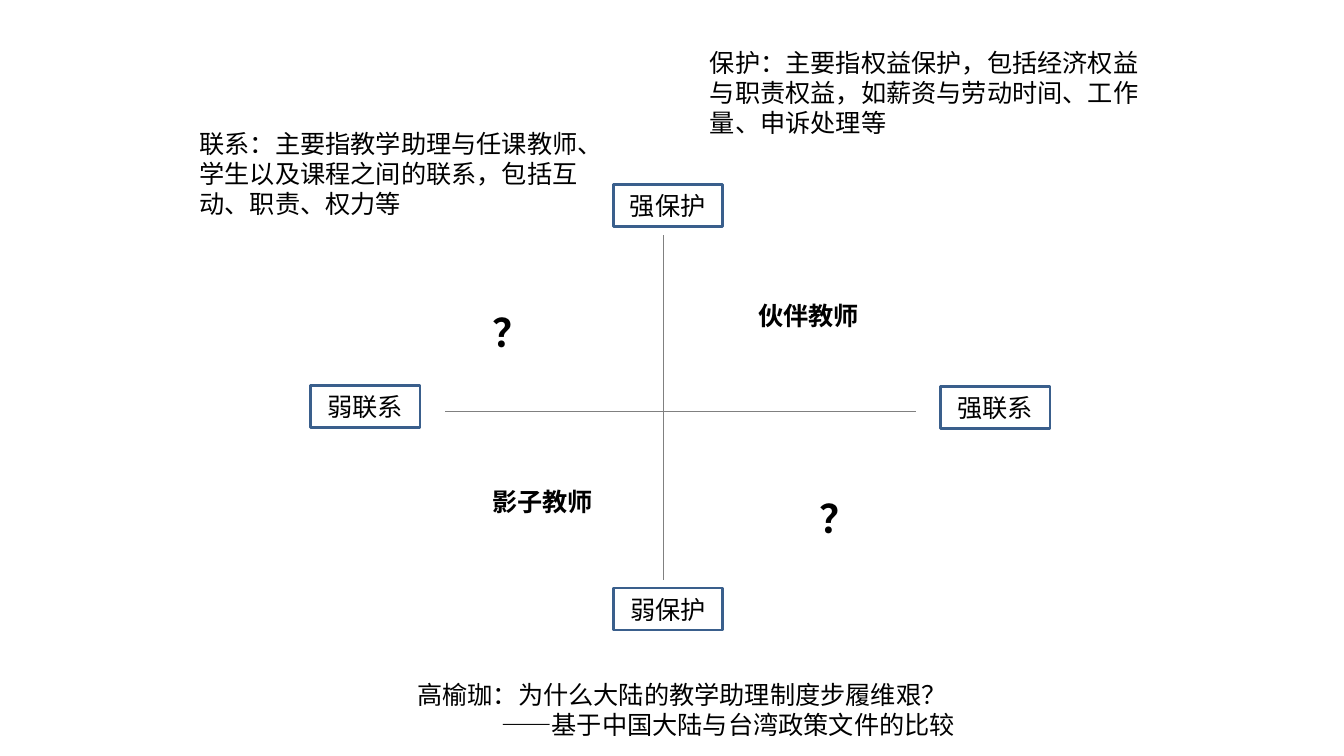
from lxml import etree
from pptx import Presentation
from pptx.dml.color import RGBColor
from pptx.enum.shapes import MSO_CONNECTOR, MSO_SHAPE
from pptx.enum.text import MSO_ANCHOR, PP_ALIGN
from pptx.oxml.ns import qn
from pptx.util import Pt

BLACK = RGBColor(0x00, 0x00, 0x00)
WHITE = RGBColor(0xFF, 0xFF, 0xFF)
BLUE = RGBColor(0x3A, 0x5F, 0x8C)
GREY = RGBColor(0x80, 0x80, 0x80)
RECTANGLE = MSO_SHAPE.RECTANGLE
STRAIGHT = MSO_CONNECTOR.STRAIGHT
CENTER = PP_ALIGN.CENTER
MIDDLE = MSO_ANCHOR.MIDDLE
LABEL_HEIGHT = 30


def add_text(para, text, font_name, size=18, bold=False):
    span = para.add_run()
    span.text = text
    span.font.name = font_name
    span.font.size = Pt(size)
    span.font.bold = bold
    span.font.color.rgb = BLACK


def add_note(left, top, width, height, lines, size=18, bold=False):
    box = page.shapes.add_textbox(Pt(left), Pt(top), Pt(width), Pt(height))
    frame = box.text_frame
    frame.word_wrap = True
    for number, line in enumerate(lines):
        para = frame.add_paragraph() if number else frame.paragraphs[0]
        add_text(para, line, "Arial", size, bold)
    return frame


deck = Presentation()
deck.slide_width = Pt(960)
deck.slide_height = Pt(540)
page = deck.slides.add_slide(deck.slide_layouts[6])

# Axes
for x1, y1, x2, y2 in [(318, 294, 654, 294), (474, 168, 474, 414)]:
    axis = page.shapes.add_connector(STRAIGHT, Pt(x1), Pt(y1), Pt(x2), Pt(y2))
    axis.line.color.rgb = GREY
    axis.line.width = Pt(0.75)
    etree.SubElement(axis._element.spPr, qn("a:effectLst"))

# Axis ends and named quadrants
labels = [
    ("强保护", 438, 132, 78, BLUE, False),
    ("弱保护", 438.3, 420, 78, BLUE, False),
    ("强联系", 672, 276, 78, BLUE, False),
    ("弱联系", 222, 275.5, 78, BLUE, False),
    ("伙伴教师", 525, 210, 105, WHITE, True),
    ("影子教师", 335, 343, 105, WHITE, True),
]
for text, left, top, width, border, bold in labels:
    label = page.shapes.add_shape(
        RECTANGLE, Pt(left), Pt(top), Pt(width), Pt(LABEL_HEIGHT))
    label.shadow.inherit = False
    label.fill.solid()
    label.fill.fore_color.rgb = WHITE
    label.line.color.rgb = border
    label.line.width = Pt(2)
    label.text_frame.vertical_anchor = MIDDLE
    para = label.text_frame.paragraphs[0]
    para.alignment = CENTER
    add_text(para, text, "Calibri", bold=bold)

# Definitions of the two axes
add_note(500, 30.2, 328, 72.7,
         ["保护：主要指权益保护，包括经济权益与职责权益，如薪资与劳动时间、工作量、申诉处理等"])
add_note(135.4, 88, 284.4, 72.7,
         ["联系：主要指教学助理与任课教师、学生以及课程之间的联系，包括互动、职责、权力等"])

# Source, with its subtitle indented
source = add_note(291, 481.7, 417.6, 50.9,
                  ["高榆珈：为什么大陆的教学助理制度步履维艰？",
                   "——基于中国大陆与台湾政策文件的比较"])
subtitle = source.paragraphs[1]._p.get_or_add_pPr()
subtitle.set("marL", str(Pt(60)))
subtitle.set("indent", "0")

# Open quadrants
for left, top in [(344.9, 216.7), (578.2, 349.2)]:
    add_note(left, top, 43.2, 41, ["？"], 28, True)

deck.save("out.pptx")
